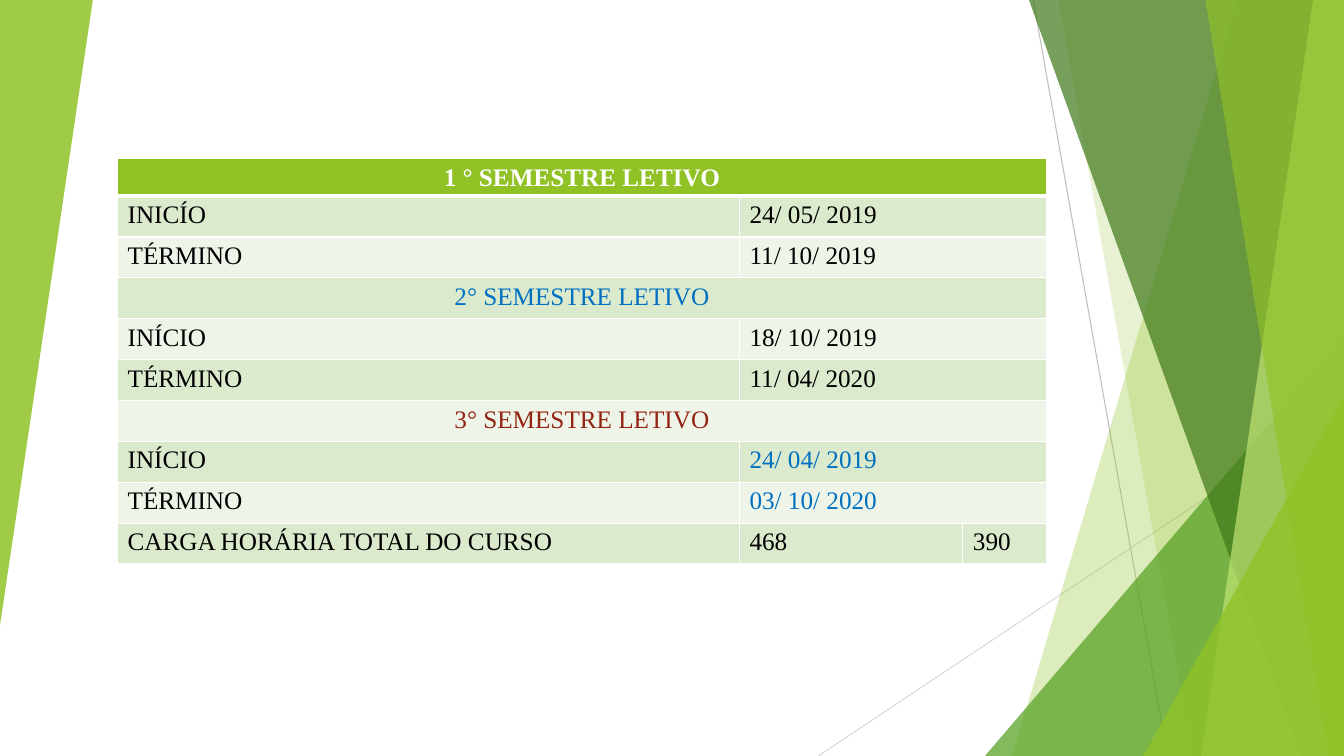
from lxml import etree
from pptx import Presentation
from pptx.dml.color import RGBColor
from pptx.enum import shapes, text
from pptx.oxml import ns
from pptx.util import Pt

COLORS = {
    "white": "FFFFFF", "black": "000000", "blue": "0070C0", "red": "932313",
    "lime": "90C226", "green": "54A021", "forest": "3F7819", "pale": "C0E474",
    "band_dark": "DBE9CD", "band_light": "EEF4E8",
    "gray": "BFBFBF", "gray_light": "D9D9D9",
}
WIDTH, HEIGHT = 960, 540


class SlideBuilder:
    font = "Times New Roman"
    size = 18

    def __init__(self, prs):
        self.slide = prs.slides.add_slide(prs.slide_layouts[6])
        self.shapes = self.slide.shapes

    def color(self, name):
        return RGBColor.from_string(COLORS[name])

    def line(self, x1, y1, x2, y2, color):
        sp = self.shapes.add_connector(
            shapes.MSO_CONNECTOR.STRAIGHT, Pt(x1), Pt(y1), Pt(x2), Pt(y2))
        sp.line.color.rgb = self.color(color)
        sp.line.width = Pt(0.75)
        etree.SubElement(sp._element.spPr, ns.qn("a:effectLst"))

    def paint(self, sp, color, opacity):
        sp.shadow.inherit = False
        sp.line.fill.background()
        sp.fill.solid()
        sp.fill.fore_color.rgb = self.color(color)
        srgb = sp._element.spPr.find(".//" + ns.qn("a:srgbClr"))
        etree.SubElement(srgb, ns.qn("a:alpha"), val=str(opacity * 1000))

    def band(self, top_x, bottom_x, color, opacity):
        fb = self.shapes.build_freeform(Pt(top_x), 0)
        corners = [(WIDTH, 0), (WIDTH, HEIGHT), (bottom_x, HEIGHT)]
        fb.add_line_segments([(Pt(x), Pt(y)) for x, y in corners], close=True)
        self.paint(fb.convert_to_shape(), color, opacity)

    def triangle(self, x, y, w, h, color, opacity, rotation=0):
        sp = self.shapes.add_shape(
            shapes.MSO_SHAPE.ISOSCELES_TRIANGLE, Pt(x), Pt(y), Pt(w), Pt(h))
        sp.adjustments[0] = 1
        sp.rotation = rotation
        self.paint(sp, color, opacity)

    def borders(self, cell, widths):
        tcPr = cell._tc.get_or_add_tcPr()
        for i, (side, width) in enumerate(widths.items()):
            ln = etree.Element(ns.qn("a:ln" + side), w=str(Pt(width)))
            fill = etree.SubElement(ln, ns.qn("a:solidFill"))
            etree.SubElement(fill, ns.qn("a:srgbClr"), val=COLORS["white"])
            tcPr.insert(i, ln)

    def cell(self, cell, value, fill, color, bold, centered):
        cell.text_frame.text = value
        p = cell.text_frame.paragraphs[0]
        p.alignment = text.PP_ALIGN.CENTER if centered else text.PP_ALIGN.LEFT
        for r in p.runs:
            r.font.name = self.font
            r.font.size = Pt(self.size)
            r.font.bold = bold
            r.font.color.rgb = self.color(color)
        cell.fill.solid()
        cell.fill.fore_color.rgb = self.color(fill)

    def table(self, x, y, col_widths, header_height, row_height, rows):
        heights = [header_height] + [row_height] * (len(rows) - 1)
        table = self.shapes.add_table(
            len(rows), len(col_widths), Pt(x), Pt(y),
            Pt(sum(col_widths)), Pt(sum(heights))).table
        for column, width in zip(table.columns, col_widths):
            column.width = Pt(width)
        last = len(col_widths) - 1
        for i, (values, color) in enumerate(rows):
            table.rows[i].height = Pt(heights[i])
            fill = "lime" if i == 0 else ("band_light", "band_dark")[i % 2]
            widths = {"L": 1, "R": 1, "T": 3 if i == 1 else 1, "B": 3 if i == 0 else 1}
            for j in range(last + 1):
                cell = table.cell(i, j)
                if i == 0:
                    cell.margin_bottom = 0
                value = values[j] if j < len(values) else ""
                label = j == 0 and len(values) > 1
                self.cell(cell, value, fill, "black" if label else color,
                          i == 0, len(values) == 1)
                self.borders(cell, widths)
            if len(values) <= last:
                table.cell(i, len(values) - 1).merge(table.cell(i, last))


def main():
    prs = Presentation()
    prs.slide_width, prs.slide_height = Pt(WIDTH), Pt(HEIGHT)
    s = SlideBuilder(prs)

    s.line(738, 0, 834, HEIGHT, "gray")
    s.line(WIDTH, 290, 584.5, HEIGHT, "gray_light")
    s.band(884, 723, "lime", 30)
    s.band(756, 852, "lime", 20)
    s.triangle(703.5, 240, 256.5, 300, "green", 72)
    s.band(735, 929.5, "forest", 70)
    s.band(938, 858, "pale", 70)
    s.band(861, 949, "lime", 65)
    s.triangle(816.5, 283, 143.5, 257, "lime", 80)
    s.triangle(0, 0, 66.3, 446.5, "lime", 85, rotation=180)

    s.table(84, 113.5, [444.2, 159.6, 59.6], 26.6, 29.2, [
        (["1 ° SEMESTRE LETIVO"], "white"),
        (["INICÍO", "24/ 05/ 2019"], "black"),
        (["TÉRMINO", "11/ 10/ 2019"], "black"),
        (["2° SEMESTRE LETIVO"], "blue"),
        (["INÍCIO", "18/ 10/ 2019"], "black"),
        (["TÉRMINO", "11/ 04/ 2020"], "black"),
        (["3° SEMESTRE LETIVO"], "red"),
        (["INÍCIO", "24/ 04/ 2019"], "blue"),
        (["TÉRMINO", "03/ 10/ 2020"], "blue"),
        (["CARGA HORÁRIA TOTAL DO CURSO", "468", "390"], "black"),
    ])
    prs.save("out.pptx")


if __name__ == "__main__":
    main()
